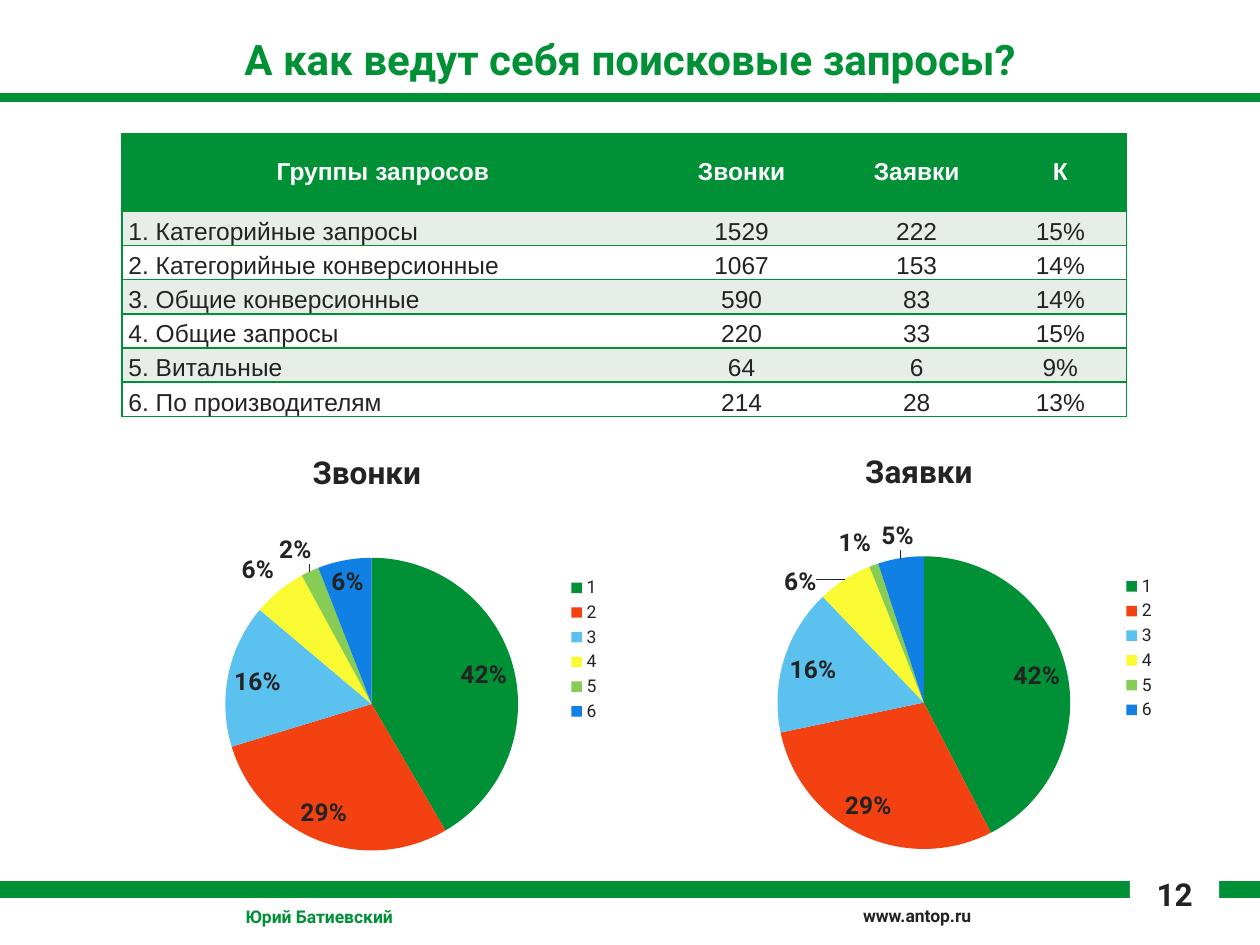
from lxml import etree
from pptx import Presentation
from pptx import util as u
from pptx.chart.data import CategoryChartData
from pptx.dml.color import RGBColor
from pptx.enum import chart as ch, shapes, text
from pptx.oxml import parse_xml
from pptx.oxml.ns import nsdecls, qn

Cm, Pt = u.Cm, u.Pt
HUES = {
    "green": "009036", "dark": "232323", "white": "FFFFFF", "pale": "E7EEE8",
    "red": "F34111", "sky": "5BC1EF", "yellow": "FAFA32", "lime": "87CC54", "blue": "1180E5",
}
MID = text.PP_ALIGN.CENTER


def style(font, size, hue, bold=True, face="Roboto"):
    font.name, font.size, font.bold = face, Pt(size), bold
    font.color.rgb = RGBColor.from_string(HUES[hue])


def label(shape, words, size, hue, align=None):
    frame = shape.text_frame
    frame.word_wrap = True
    frame.text = words
    para = frame.paragraphs[0]
    para.alignment = align
    style(para.runs[0].font, size, hue)
    return frame


deck = Presentation()
deck.slide_width, deck.slide_height = Cm(25.4), Cm(19.05)
slide = deck.slides.add_slide(deck.slide_layouts[6])
items = slide.shapes

for top, width in ((17.93, 10), (1.96, 5)):
    bar = items.add_connector(shapes.MSO_CONNECTOR.STRAIGHT, 0, Cm(top), Cm(25.4), Cm(top))
    bar.line.color.rgb = RGBColor.from_string(HUES["green"])
    bar.line.width = Pt(width)
    etree.SubElement(bar._element.spPr, qn("a:effectLst"))

site = items.add_textbox(Cm(17.07), Cm(18.11), Cm(6.25), Cm(0.69))
label(site, "www.antop.ru", 10, "dark").margin_left = Cm(0.33)

title = items.add_textbox(Cm(1.3), Cm(0.53), Cm(22.81), Cm(1.3))
label(title, "А как ведут себя поисковые запросы?", 24, "green", MID).vertical_anchor = text.MSO_ANCHOR.MIDDLE

author = items.add_textbox(Cm(4.7), Cm(18.14), Cm(14.81), Cm(0.61))
label(author, "Юрий Батиевский", 10, "green")

page = items.add_shape(shapes.MSO_SHAPE.RECTANGLE, Cm(22.78), Cm(17.4), Cm(1.8), Cm(1.65))
page.shadow.inherit = False
page.fill.solid()
page.fill.fore_color.rgb = RGBColor.from_string(HUES["white"])
page.line.fill.background()
frame = label(page, "12", 18, "dark", MID)
frame.vertical_anchor = text.MSO_ANCHOR.TOP
frame.paragraphs[0].line_spacing = 1.15

rows = [
    ("Группы запросов", "Звонки", "Заявки", "К"),
    ("1. Категорийные запросы", "1529", "222", "15%"),
    ("2. Категорийные конверсионные", "1067", "153", "14%"),
    ("3. Общие конверсионные", "590", "83", "14%"),
    ("4. Общие запросы", "220", "33", "15%"),
    ("5. Витальные", "64", "6", "9%"),
    ("6. По производителям", "214", "28", "13%"),
]
widths = (10.52, 3.94, 3.12, 2.67)
grid = items.add_table(len(rows), 4, Cm(2.46), Cm(2.69), Cm(sum(widths)), Cm(5.71)).table
for col, width in zip(grid.columns, widths):
    col.width = Cm(width)
for i, row in enumerate(rows):
    head = i == 0
    grid.rows[i].height = Cm(1.57 if head else 0.69)
    fill = "green" if head else "pale" if i % 2 else "white"
    for j, words in enumerate(row):
        cell = grid.cell(i, j)
        first = j == 0 and not head
        cell.margin_left = Cm(0.13 if first else 0)
        cell.margin_right = cell.margin_top = cell.margin_bottom = 0
        cell.vertical_anchor = text.MSO_ANCHOR.MIDDLE if head else text.MSO_ANCHOR.BOTTOM
        cell.text = words
        para = cell.text_frame.paragraphs[0]
        para.alignment = text.PP_ALIGN.LEFT if first else MID
        style(para.runs[0].font, 14, "white" if head else "dark", head, "Arial")
        props = cell._tc.get_or_add_tcPr()
        for side in "LRTB":
            shown = side in "TB" or (side, j) in (("L", 0), ("R", 3))
            paint = f'<a:solidFill><a:srgbClr val="{HUES["green"]}"/></a:solidFill>' if shown else "<a:noFill/>"
            props.append(parse_xml(f'<a:ln{side} {nsdecls("a")} w="12700">{paint}</a:ln{side}>'))
        cell.fill.solid()
        cell.fill.fore_color.rgb = RGBColor.from_string(HUES[fill])

slices = ("green", "red", "sky", "yellow", "lime", "blue")
pies = (
    ("Звонки", (42, 29, 16, 6, 2, 6), 2.44, 8.69, 9.91),
    ("Заявки", (42, 29, 16, 6, 1, 5), 13.51, 8.66, 10.03),
)
for name, vals, left, top, width in pies:
    data = CategoryChartData()
    data.categories = ["1", "2", "3", "4", "5", "6"]
    data.add_series(name, vals)
    pie = items.add_chart(ch.XL_CHART_TYPE.PIE, Cm(left), Cm(top), Cm(width), Cm(8.81), data).chart
    style(pie.font, 10, "dark", False)
    pie.has_title = True
    pie.chart_title.text_frame.text = name
    style(pie.chart_title.text_frame.paragraphs[0].runs[0].font, 18, "dark")
    pie.chart_title.include_in_layout = False
    pie.has_legend = True
    pie.legend.position = ch.XL_LEGEND_POSITION.RIGHT
    pie.legend.include_in_layout = False
    plot = pie.plots[0]
    plot.vary_by_categories = True
    for n, hue in enumerate(slices):
        part = plot.series[0].points[n].format
        part.fill.solid()
        part.fill.fore_color.rgb = RGBColor.from_string(HUES[hue])
        part.line.fill.background()
    tags = plot.series[0].data_labels
    tags.show_percentage, tags.show_value = True, False
    tags.number_format, tags.number_format_is_linked = "0%", False
    tags.position = ch.XL_LABEL_POSITION.BEST_FIT
    style(tags.font, 14, "dark")
    area = pie._chartSpace.chart.plotArea
    for old in area.findall(qn("c:layout")):
        area.remove(old)
    spots = (("x", 0.21), ("y", 0.29), ("w", 0.6), ("h", 0.67))
    modes = '<c:layoutTarget val="inner"/><c:xMode val="edge"/><c:yMode val="edge"/>'
    place = "".join(f'<c:{key} val="{val}"/>' for key, val in spots)
    area.insert(0, parse_xml(
        f'<c:layout {nsdecls("c")}><c:manualLayout>{modes}{place}</c:manualLayout></c:layout>'))

deck.save("out.pptx")
